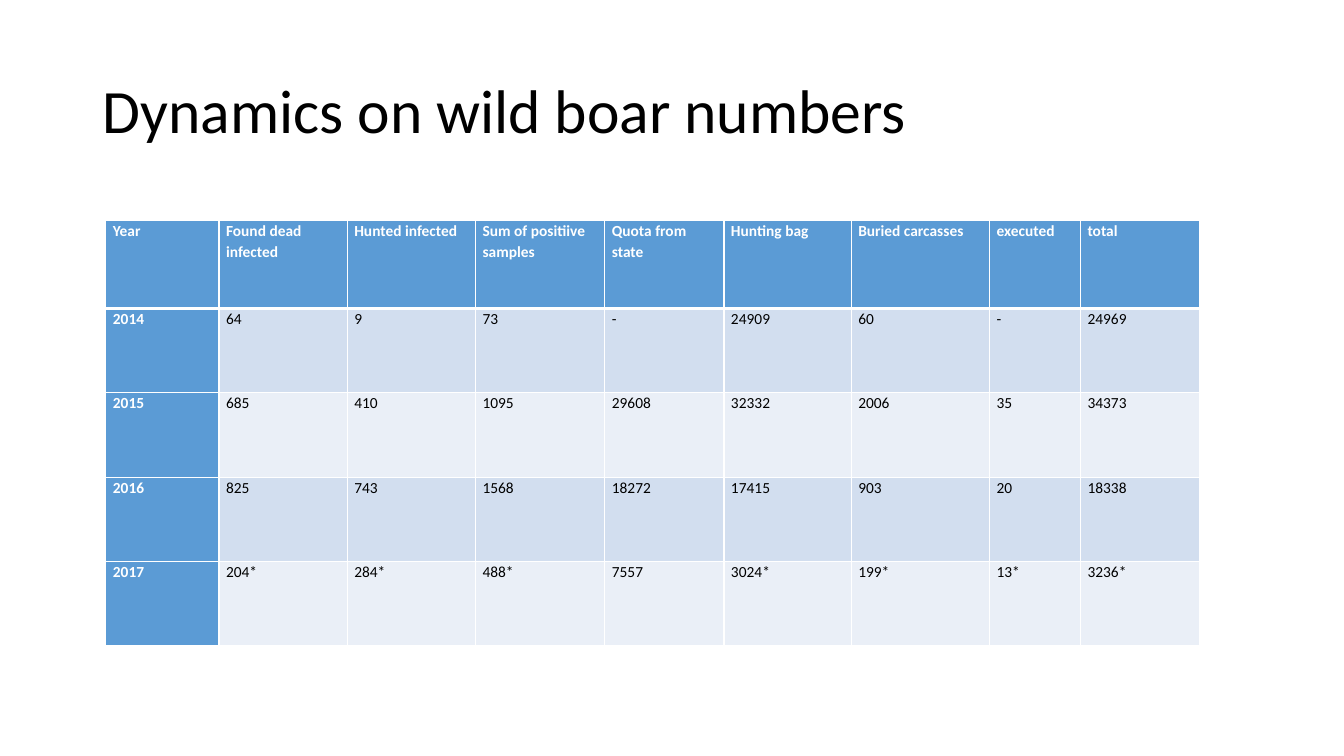
from lxml import etree
from pptx import Presentation
from pptx.dml.color import RGBColor
from pptx.enum.text import MSO_ANCHOR
from pptx.oxml.ns import qn
from pptx.util import Inches, Pt

MIDDLE = MSO_ANCHOR.MIDDLE
TOP = MSO_ANCHOR.TOP
FONT = "Calibri"
BLACK, WHITE = "000000", "FFFFFF"
BLUE = "5B9BD5"
BANDS = ("D2DEEF", "EAEFF7")

COL_WIDTHS = (1.12, 1.27, 1.27, 1.28, 1.18, 1.26, 1.37, 0.9, 1.18)
HEADER_HEIGHT = 0.87
BOAR_ROWS = (
    ("Year", "Found dead infected", "Hunted infected", "Sum of positiive samples",
     "Quota from state", "Hunting bag", "Buried carcasses", "executed", "total"),
    ("2014", "64", "9", "73", "-", "24909", "60", "-", "24969"),
    ("2015", "685", "410", "1095", "29608", "32332", "2006", "35", "34373"),
    ("2016", "825", "743", "1568", "18272", "17415", "903", "20", "18338"),
    ("2017", "204*", "284*", "488*", "7557", "3024*", "199*", "13*", "3236*"),
)


def rgb(color):
    return RGBColor.from_string(color)


def add_text(tf, text, size, color, spacing, bold=False):
    p = tf.paragraphs[0]
    p.line_spacing = spacing
    r = p.add_run()
    r.text = text
    r.font.name = FONT
    r.font.size = Pt(size)
    r.font.bold = bold
    r.font.color.rgb = rgb(color)


def set_borders(cell, color, bottom_width):
    """Draw 1 pt cell borders with a chosen bottom width."""
    tc_pr = cell._tc.get_or_add_tcPr()
    sides = (("a:lnL", 1), ("a:lnR", 1), ("a:lnT", 1), ("a:lnB", bottom_width))
    for i, (tag, width) in enumerate(sides):
        ln = etree.Element(qn(tag), w=str(Pt(width)))
        fill = etree.SubElement(ln, qn("a:solidFill"))
        etree.SubElement(fill, qn("a:srgbClr"), val=color)
        tc_pr.insert(i, ln)  # borders precede the fill


def add_title(slide, text, left, top, width, height):
    sp = slide.shapes.add_textbox(Inches(left), Inches(top), Inches(width), Inches(height))
    tf = sp.text_frame
    tf.word_wrap = True
    tf.vertical_anchor = MIDDLE
    add_text(tf, text, 44, BLACK, 0.9)


def fill_cell(cell, text, row, col):
    is_heading = row == 0 or col == 0
    cell.margin_left = cell.margin_right = Inches(0.07)
    cell.margin_top = cell.margin_bottom = 0
    cell.vertical_anchor = TOP
    cell.fill.solid()
    cell.fill.fore_color.rgb = rgb(BLUE if is_heading else BANDS[(row - 1) % 2])
    set_borders(cell, WHITE, 3 if row == 0 else 1)
    add_text(cell.text_frame, text, 11, WHITE if is_heading else BLACK, 1.07, is_heading)


def add_boar_table(slide, left, top, width, height):
    frame = slide.shapes.add_table(len(BOAR_ROWS), len(COL_WIDTHS), Inches(left),
                                   Inches(top), Inches(width), Inches(height))
    table = frame.table
    table.first_col = True
    for column, share in zip(table.columns, COL_WIDTHS):
        column.width = Inches(width * share / sum(COL_WIDTHS))
    body_height = (height - HEADER_HEIGHT) / (len(BOAR_ROWS) - 1)
    for row, values in enumerate(BOAR_ROWS):
        table.rows[row].height = Inches(body_height if row else HEADER_HEIGHT)
        for col, text in enumerate(values):
            fill_cell(table.cell(row, col), text, row, col)


def main():
    prs = Presentation()
    prs.slide_width, prs.slide_height = Inches(13.33), Inches(7.5)
    slide = prs.slides.add_slide(prs.slide_layouts[6])
    slide.background.fill.solid()
    slide.background.fill.fore_color.rgb = rgb(WHITE)
    # Title
    add_title(slide, "Dynamics on wild boar numbers", 0.92, 0.4, 11.5, 1.45)
    # Yearly figures
    add_boar_table(slide, 1.05, 2.19, 10.85, 4.22)
    prs.save("out.pptx")


if __name__ == "__main__":
    main()
